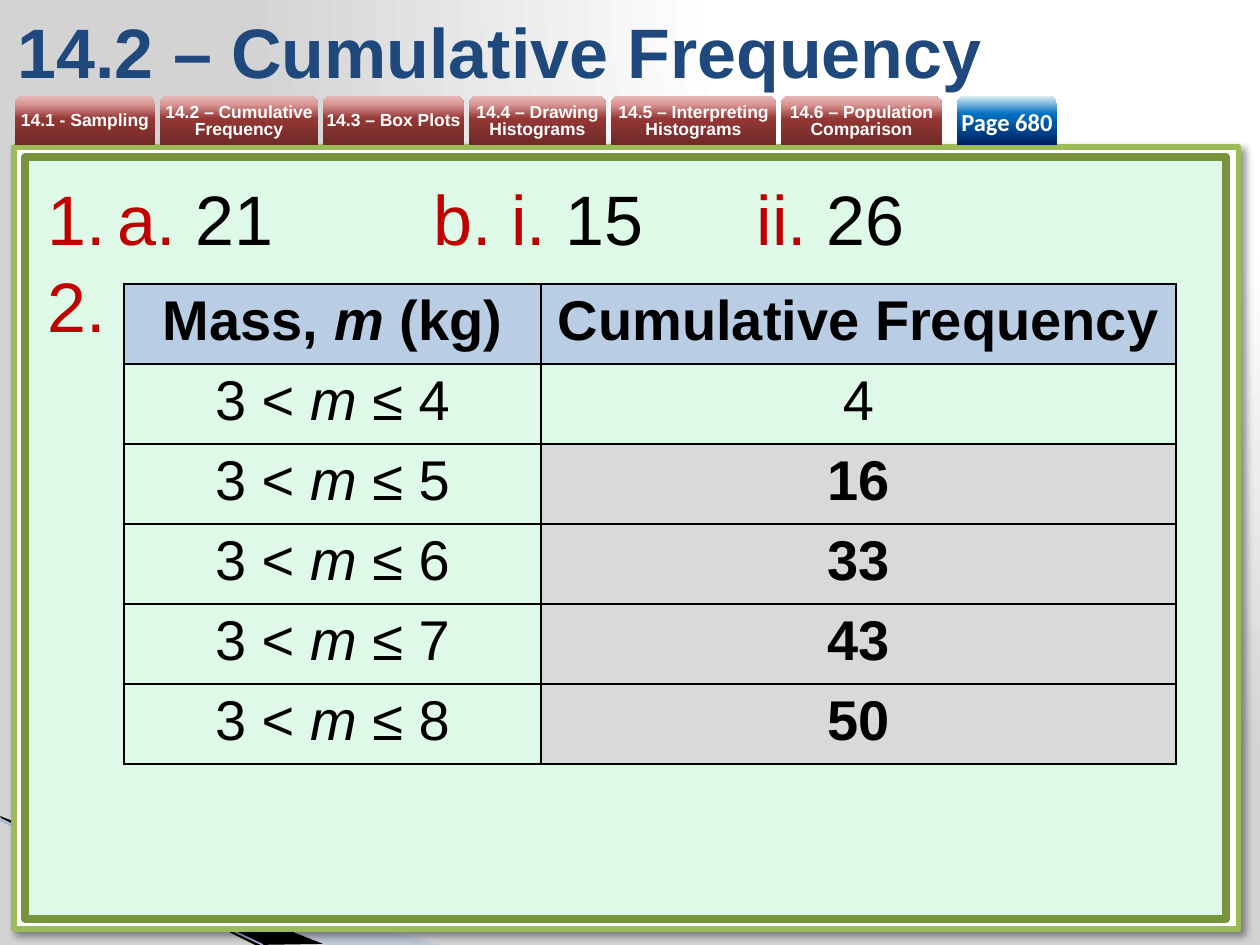
"""Build the cumulative frequency answer slide."""
from dataclasses import dataclass

from lxml import etree
from pptx import Presentation
from pptx.dml.color import RGBColor
from pptx.enum.shapes import MSO_CONNECTOR, MSO_SHAPE
from pptx.enum.text import MSO_ANCHOR, MSO_AUTO_SIZE, PP_ALIGN
from pptx.oxml.ns import qn
from pptx.util import Pt

RECT = MSO_SHAPE.RECTANGLE
TAB = MSO_SHAPE.ROUND_2_SAME_RECTANGLE
LINE = MSO_CONNECTOR.STRAIGHT
MIDDLE = MSO_ANCHOR.MIDDLE
FIXED = MSO_AUTO_SIZE.NONE
LEFT, CENTER = PP_ALIGN.LEFT, PP_ALIGN.CENTER

WHITE = RGBColor(0xFF, 0xFF, 0xFF)
BLACK = RGBColor(0x00, 0x00, 0x00)
SILVER = RGBColor(0xD3, 0xD3, 0xD3)
NAVY = RGBColor(0x1F, 0x49, 0x7D)
RED = RGBColor(0xC0, 0x00, 0x00)
LIME = RGBColor(0x9B, 0xBB, 0x59)
OLIVE = RGBColor(0x77, 0x93, 0x3C)
MINT = RGBColor(0xDF, 0xF9, 0xE8)
HAZE = RGBColor(0xA7, 0xB9, 0xDB)
STEEL = RGBColor(0x9E, 0xB3, 0xD6)
HEAD = RGBColor(0xB9, 0xCD, 0xE5)
GREY = RGBColor(0xD9, 0xD9, 0xD9)
MAROON = ((0, RGBColor(0x6F, 0x29, 0x27)), (54, RGBColor(0x95, 0x37, 0x35)),
          (83, RGBColor(0xD9, 0x96, 0x94)), (100, RGBColor(0xE6, 0xB9, 0xB8)))
BLUE = ((0, RGBColor(0x00, 0x20, 0x60)), (63, RGBColor(0x00, 0x70, 0xC0)),
        (100, RGBColor(0xDB, 0xEE, 0xF4)))
GLOW = ((0, WHITE), (40, WHITE), (100, SILVER))

SCALE = 914400 / 126
GAP = 5


@dataclass
class Tab:
    """A navigation tab: its label and width."""
    label: str
    wide: int


TABS = (Tab("14.1 - Sampling", 140), Tab("14.2 – Cumulative Frequency", 158),
        Tab("14.3 – Box Plots", 141), Tab("14.4 – Drawing Histograms", 137),
        Tab("14.5 – Interpreting Histograms", 165),
        Tab("14.6 – Population Comparison", 161))
TOTALS = (4, 16, 33, 43, 50)


def px(size: int) -> int:
    """Turn pixels into EMU."""
    return round(size * SCALE)


def box(x: int, y: int, wide: int, high: int) -> tuple:
    """Turn a pixel box into EMU."""
    return px(x), px(y), px(wide), px(high)


def place(shape, *area: int) -> None:
    """Move a placeholder to an area and to the front."""
    shape.left, shape.top, shape.width, shape.height = box(*area)
    shape.element.getparent().append(shape.element)


def node(parent, tag: str, **attrs):
    """Add a child element."""
    return etree.SubElement(parent, qn(tag), {k: str(v) for k, v in attrs.items()})


def write(para, text: str, size=40, color=BLACK, bold=False, italic=False,
          face="Arial", align=None) -> None:
    """Add a formatted run to a paragraph."""
    if align is not None:
        para.alignment = align
    run = para.add_run()
    run.text = text
    font = run.font
    font.name, font.size, font.bold, font.italic = face, Pt(size), bold, italic
    font.color.rgb = color


def ramp(owner, fill, stops: tuple):
    """Give a fill gradient stops and return its element."""
    fill.gradient()
    grad = owner.element.xpath(".//a:gradFill")[0]
    for child in list(grad):
        grad.remove(child)
    items = node(grad, "a:gsLst")
    for spot, color in stops:
        node(node(items, "a:gs", pos=spot * 1000), "a:srgbClr", val=color)
    return grad


def panel(slide, area: tuple, fill: RGBColor, line: RGBColor, width: float):
    """Draw a bordered rectangle."""
    shape = slide.shapes.add_shape(RECT, *box(*area))
    shape.shadow.inherit = False
    shape.fill.solid()
    shape.fill.fore_color.rgb = fill
    shape.line.color.rgb = line
    shape.line.width = Pt(width)
    return shape


def wedge(slide, points: list, color: RGBColor):
    """Draw a filled outline through the points."""
    build = slide.shapes.build_freeform(*points[0], scale=SCALE)
    build.add_line_segments(points[1:])
    shape = build.convert_to_shape()
    shape.shadow.inherit = False
    shape.fill.solid()
    shape.fill.fore_color.rgb = color
    shape.line.fill.background()
    return shape


def badge(slide, x: int, tab: Tab, stops: tuple, **style) -> None:
    """Draw a shaded tab."""
    shape = slide.shapes.add_shape(TAB, *box(x, 96, tab.wide, 49))
    shape.shadow.inherit = False
    shape.line.fill.background()
    node(ramp(shape, shape.fill, stops), "a:lin", ang=16200000, scaled=0)
    frame = shape.text_frame
    frame.word_wrap = True
    frame.vertical_anchor = MIDDLE
    frame.margin_left = frame.margin_right = frame.margin_top = frame.margin_bottom = 0
    para = frame.paragraphs[0]
    para.line_spacing = Pt(10) if style["size"] == 10 else 1.0
    write(para, tab.label, color=WHITE, bold=True, align=CENTER, **style)


def number(para, stops: tuple) -> None:
    """Give a paragraph a red number and tab stops."""
    props = para._p.get_or_add_pPr()
    props.set("marL", str(px(70)))
    props.set("indent", str(-px(70)))
    node(node(props, "a:buClr"), "a:srgbClr", val=RED)
    node(props, "a:buFont", typeface="+mj-lt")
    node(props, "a:buAutoNum", type="arabicPeriod")
    tabs = node(props, "a:tabLst")
    for stop in stops:
        node(tabs, "a:tab", pos=px(stop), algn="l")


def cell(spot, parts: tuple, fill=None, bold=False) -> None:
    """Fill in a ruled table cell."""
    spot.margin_left = spot.margin_right = spot.margin_top = spot.margin_bottom = px(6)
    for text in parts:
        write(spot.text_frame.paragraphs[0], text, size=32, bold=bold,
              italic=text == "m", align=CENTER)
    props = spot._tc.get_or_add_tcPr()
    for side in "LRTB":
        edge = node(props, f"a:ln{side}", w=Pt(1))
        node(node(edge, "a:solidFill"), "a:srgbClr", val=BLACK)
    if fill is None:
        spot.fill.background()
    else:
        spot.fill.solid()
        spot.fill.fore_color.rgb = fill


def scene(slide) -> None:
    """Draw the backdrop, panels and tabs."""
    grad = ramp(slide, slide.background.fill, GLOW)
    node(node(grad, "a:path", path="circle"), "a:fillToRect", l=65000, b=98000)
    haze = wedge(slide, [(0, 819), (440, 945), (326, 945), (0, 818)], HAZE)
    node(haze.element.xpath(".//a:solidFill/a:srgbClr")[0], "a:alpha", val=40000)
    wedge(slide, [(0, 816), (323, 944), (255, 945), (1, 818)], BLACK)
    line = slide.shapes.add_connector(LINE, 0, px(820), px(263), px(945))
    line.line.color.rgb = STEEL
    line.line.width = Pt(0.95)
    node(line.element.spPr, "a:effectLst")
    outer = panel(slide, (14, 147, 1225, 782), WHITE, LIME, 3)
    cast = node(outer.element.xpath("./p:spPr/a:effectLst")[0], "a:outerShdw",
                blurRad=Pt(4), dist=Pt(3), dir=2700000, algn="tl", rotWithShape=0)
    node(node(cast, "a:srgbClr", val=BLACK), "a:alpha", val=40000)
    panel(slide, (25, 157, 1201, 762), MINT, OLIVE, 4.33)
    x = 15
    for tab in TABS:
        badge(slide, x, tab, MAROON, size=10)
        x += tab.wide + GAP


def answers(slide) -> None:
    """Write the title, the numbered answers and the table."""
    title, body = slide.placeholders
    place(title, 5, 6, 1062, 90)
    title.text_frame.vertical_anchor = MIDDLE
    write(title.text_frame.paragraphs[0], "14.2 – Cumulative Frequency",
          color=NAVY, bold=True, align=LEFT)
    badge(slide, 957, Tab("Page 680", 100), BLUE, size=14, face="Calibri")
    place(body, 35, 169, 1181, 183)
    frame = body.text_frame
    frame.auto_size = FIXED
    first, second = frame.paragraphs[0], frame.add_paragraph()
    number(first, (165, 386, 709, 937))
    number(second, (165, 386, 622, 646, 937))
    first.space_before, second.space_before = Pt(0), Pt(2)
    for label, value in (("a. ", "21\t"), ("b. i.", " 15\t"), ("ii.", " 26")):
        write(first, label, color=RED)
        write(first, value)
    write(second, " ")
    table = slide.shapes.add_table(6, 2, *box(124, 284, 1052, 480)).table
    table.first_row = table.horz_banding = False
    table.columns[0].width, table.columns[1].width = px(417), px(635)
    cell(table.cell(0, 0), ("Mass, ", "m", " (kg)"), HEAD, True)
    cell(table.cell(0, 1), ("Cumulative Frequency",), HEAD, True)
    for row, total in enumerate(TOTALS, 1):
        found = row > 1
        cell(table.cell(row, 0), ("3 < ", "m", f" ≤ {row + 3}"))
        cell(table.cell(row, 1), (str(total),), GREY if found else None, found)


def main() -> None:
    """Build and save the slide."""
    deck = Presentation()
    deck.slide_width, deck.slide_height = px(1260), px(945)
    slide = deck.slides.add_slide(deck.slide_layouts[1])
    scene(slide)
    answers(slide)
    deck.save("out.pptx")


if __name__ == "__main__":
    main()
